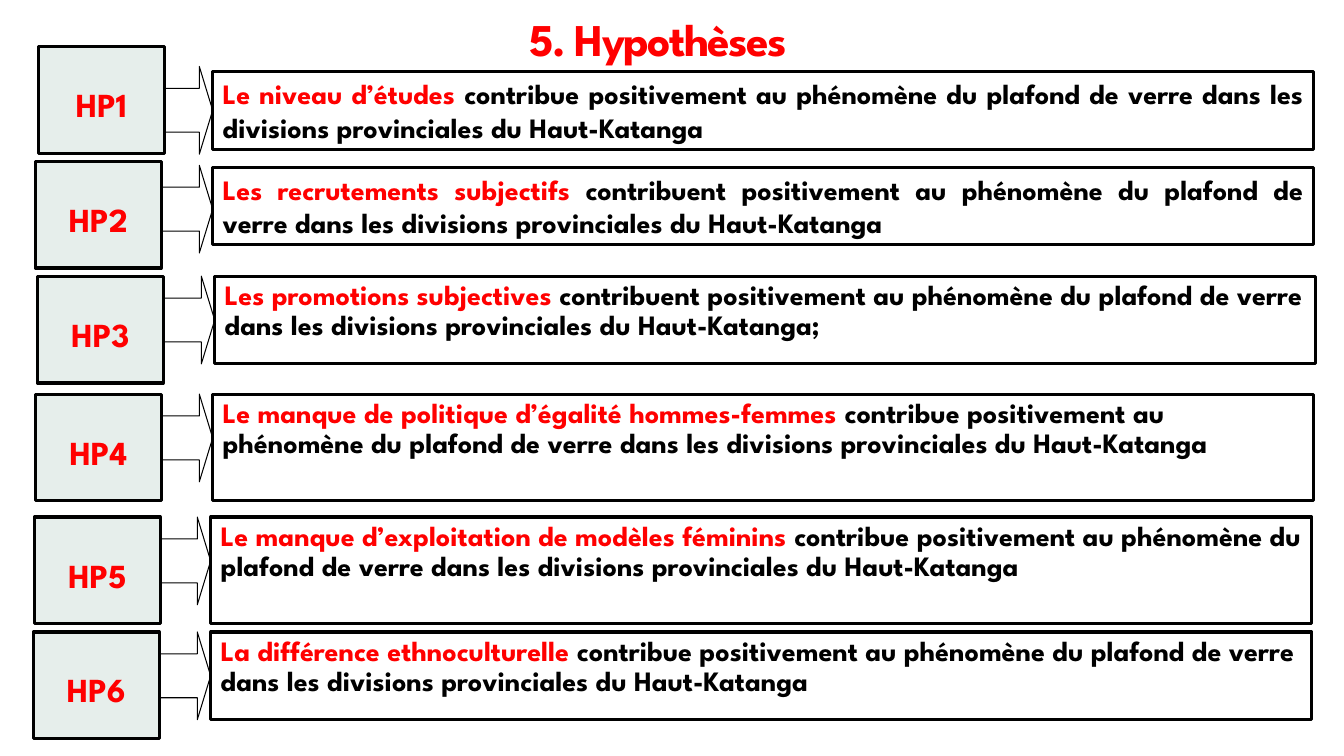
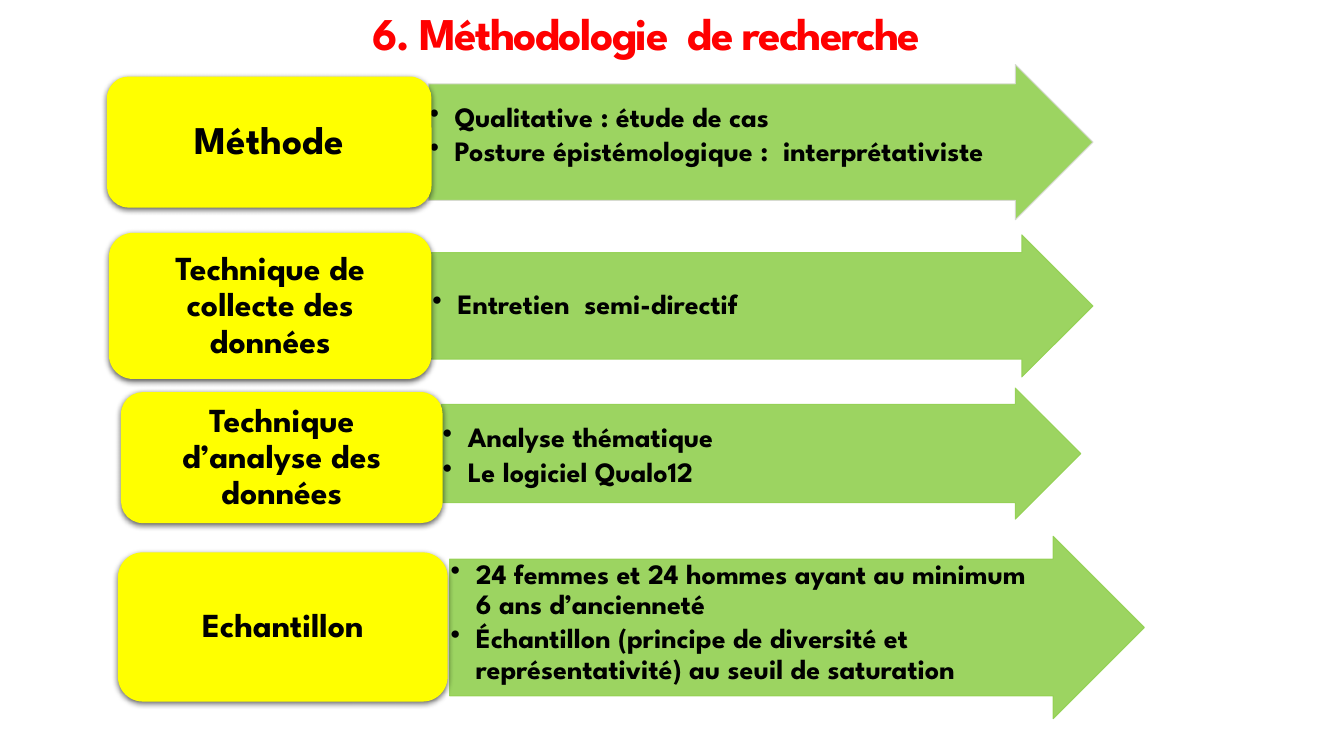
import dataclasses

import pptx
import pptx.dml.color
import pptx.enum.shapes
import pptx.enum.text
import pptx.oxml
import pptx.oxml.ns
import pptx.util

Inches = pptx.util.Inches
Pt = pptx.util.Pt
Shape = pptx.enum.shapes.MSO_SHAPE
Align = pptx.enum.text.PP_ALIGN
Anchor = pptx.enum.text.MSO_ANCHOR


@dataclasses.dataclass(frozen=True)
class Theme:
    font: str = "League Spartan"
    accent: str = "FF0000"
    ink: str = "000000"
    paper: str = "FFFFFF"
    label: str = "E6EEEB"
    topic: str = "FFFF00"
    arrow: str = "92D050"
    pale_line: str = "D7D9D2"
    title_size: float = 32.4
    large_size: float = 28
    label_size: float = 24
    body_size: float = 20
    heavy: float = 2.25
    thin: float = 0.75


def color(value):
    return pptx.dml.color.RGBColor.from_string(value)


def xml(text):
    """Build an element, declaring the drawing namespace on its opening tag."""
    return pptx.oxml.parse_xml(text.replace(">", f" {pptx.oxml.ns.nsdecls('a')}>", 1))


class Deck:
    def __init__(self, theme):
        self.theme = theme
        self.presentation = pptx.Presentation()
        self.presentation.slide_width = Inches(13.33)
        self.presentation.slide_height = Inches(7.5)
        self.slide = None

    def new_slide(self, title, left, top, width, height):
        layout = self.presentation.slide_layouts[6]
        self.slide = self.presentation.slides.add_slide(layout)
        heading = self.slide.shapes.add_textbox(*map(Inches, (left, top, width, height)))
        paragraph = self.set_text(heading, [[(title, self.theme.accent)]],
                                  self.theme.title_size, line_spacing=0.85)[0]
        paragraph.runs[0]._r.get_or_add_rPr().set("spc", "-120")

    def set_text(self, shape, paragraphs, size, insets=(0.1, 0.05, 0.1, 0.05),
                 anchor=Anchor.MIDDLE, align=Align.CENTER, **spacing):
        """Fill a shape; each paragraph is a list of (text, colour) pairs."""
        frame = shape.text_frame
        frame_format = {"word_wrap": True, "vertical_anchor": anchor}
        for side, inset in zip(("left", "top", "right", "bottom"), insets):
            frame_format[f"margin_{side}"] = Inches(inset)
        for name, value in frame_format.items():
            setattr(frame, name, value)
        for index, pieces in enumerate(paragraphs):
            paragraph = frame.add_paragraph() if index else frame.paragraphs[0]
            for name, value in {"alignment": align, **spacing}.items():
                setattr(paragraph, name, value)
            for text, ink in pieces:
                run = paragraph.add_run()
                run.text = text
                run.font.color.rgb = color(ink)
                font_format = {"name": self.theme.font, "size": Pt(size), "bold": True}
                for name, value in font_format.items():
                    setattr(run.font, name, value)
        return frame.paragraphs

    def block(self, kind, box, fill, line=None, weight=0.75, adjustments=()):
        shape = self.slide.shapes.add_shape(kind, *map(Inches, box))
        shape.shadow.inherit = False
        shape.fill.solid()
        shape.fill.fore_color.rgb = color(fill)
        if line:
            shape.line.color.rgb = color(line)
            shape.line.width = Pt(weight)
        else:
            shape.line.fill.background()
        for index, value in enumerate(adjustments):
            shape.adjustments[index] = value
        return shape

    def pointer(self, box):
        self.block(Shape.RIGHT_ARROW, box, self.theme.paper, self.theme.ink,
                   self.theme.thin, (0.5, 0.25))

    def label(self, text, box):
        shape = self.block(Shape.RECTANGLE, box, self.theme.label,
                           self.theme.ink, self.theme.heavy)
        self.set_text(shape, [[(text, self.theme.accent)]], self.theme.label_size,
                      insets=(0.1, 0.13, 0.1, 0.05))

    def statement(self, factor, claim, box, align, line_spacing):
        shape = self.block(Shape.RECTANGLE, box, self.theme.paper,
                           self.theme.ink, self.theme.heavy)
        self.set_text(shape, [[(factor + " ", self.theme.accent), (claim, self.theme.ink)]],
                      self.theme.body_size, anchor=Anchor.TOP, align=align,
                      line_spacing=line_spacing)

    def detail_arrow(self, points, box, top_inset, line):
        shape = self.block(Shape.RIGHT_ARROW, box, self.theme.arrow, line,
                           self.theme.thin, (0.75, 0.5))
        for tint in list(shape._element.spPr.iter(pptx.oxml.ns.qn("a:srgbClr"))):
            tint.append(xml('<a:alpha val="90000"></a:alpha>'))
        paragraphs = self.set_text(
            shape, [[(point, self.theme.ink)] for point in points], self.theme.body_size,
            insets=(0.01, top_inset, 0.4, 0.01), anchor=Anchor.TOP, align=Align.LEFT,
            line_spacing=0.9, space_after=Pt(3))
        for paragraph in paragraphs:
            properties = paragraph._p.get_or_add_pPr()
            properties.set("marL", str(Inches(0.25)))
            properties.set("indent", str(Inches(-0.25)))
            properties.append(xml('<a:buChar char="•"></a:buChar>'))

    def topic(self, text, box, size):
        shape = self.block(Shape.ROUNDED_RECTANGLE, box, self.theme.topic)
        effects = shape._element.spPr.find(pptx.oxml.ns.qn("a:effectLst"))
        effects.append(xml(
            f'<a:outerShdw blurRad="{Pt(4.5)}" dist="{Pt(1.5)}" dir="5400000" rotWithShape="0">'
            f'<a:srgbClr val="{self.theme.ink}"><a:alpha val="63000"/></a:srgbClr>'
            '</a:outerShdw>'))
        self.set_text(shape, [[(text, self.theme.ink)]], size,
                      insets=(0.12, 0.06, 0.12, 0.06), line_spacing=0.9)


def hypotheses(deck):
    deck.new_slide("5. Hypothèses", 2.11, 0.14, 8.84, 0.57)
    singular = "contribue positivement"
    plural = "contribuent positivement"
    ending = " au phénomène du plafond de verre dans les divisions provinciales du Haut-Katanga"
    justified = (Align.JUSTIFY, 1.0)
    compact = (Align.LEFT, 0.9)
    # factor, claim, label left and top, pointer top, statement left, top and height, layout
    rows = [
        ("Le niveau d’études", singular + ending,
         0.38, 0.46, 0.66, 2.11, 0.71, 0.77, justified),
        ("Les recrutements subjectifs", plural + ending,
         0.35, 1.6, 1.64, 2.11, 1.66, 0.77, justified),
        ("Les promotions subjectives", plural + ending + ";",
         0.37, 2.74, 2.74, 2.13, 2.74, 0.87, compact),
        ("Le manque de politique d’égalité hommes-femmes", singular + ending,
         0.35, 3.91, 3.91, 2.11, 3.91, 1.06, compact),
        ("Le manque d’exploitation de modèles féminins", singular + ending,
         0.34, 5.13, 5.13, 2.09, 5.13, 1.06, compact),
        ("La différence ethnoculturelle", singular + ending,
         0.33, 6.27, 6.27, 2.09, 6.27, 0.87, compact),
    ]
    for number, row in enumerate(rows, 1):
        factor, claim, label_left, label_top, pointer_top, left, top, height, layout = row
        deck.pointer((left - 0.53, pointer_top, 0.53, 0.87))
        deck.statement(factor, claim, (left, top, 10.92, height), *layout)
        deck.label(f"HP{number}", (label_left, label_top, 1.25, 1.06))


def methodology(deck):
    theme = deck.theme
    deck.new_slide("6. Méthodologie  de recherche", 2.81, 0.09, 7.21, 0.55)
    # topic, its size and box, points, arrow box, top inset, arrow line
    rows = [
        ("Méthode", theme.large_size, (1.06, 0.76, 3.22, 1.3),
         ["Qualitative : étude de cas", "Posture épistémologique :  interprétativiste"],
         (4.25, 0.64, 6.59, 1.54), 0.19, theme.pale_line),
        ("Technique de collecte des données", theme.label_size, (1.08, 2.31, 3.2, 1.45),
         ["Entretien  semi-directif"],
         (4.28, 2.33, 6.56, 1.41), 0.37, theme.arrow),
        ("Technique d’analyse des données", theme.label_size, (1.2, 3.89, 3.19, 1.3),
         ["Analyse thématique", "Le logiciel Qualo12"],
         (4.38, 3.85, 6.34, 1.3), 0.19, theme.arrow),
        ("Echantillon", theme.label_size, (1.17, 5.48, 3.27, 1.48),
         ["24 femmes et 24 hommes ayant au minimum 6 ans d’ancienneté",
          "Échantillon (principe de diversité et représentativité) au seuil de saturation"],
         (4.46, 5.32, 6.89, 1.81), 0.01, theme.arrow),
    ]
    for topic, size, topic_box, points, arrow_box, top_inset, line in rows:
        deck.detail_arrow(points, arrow_box, top_inset, line)
        deck.topic(topic, topic_box, size)


def main():
    deck = Deck(Theme())
    hypotheses(deck)
    methodology(deck)
    deck.presentation.save("out.pptx")


if __name__ == "__main__":
    main()
